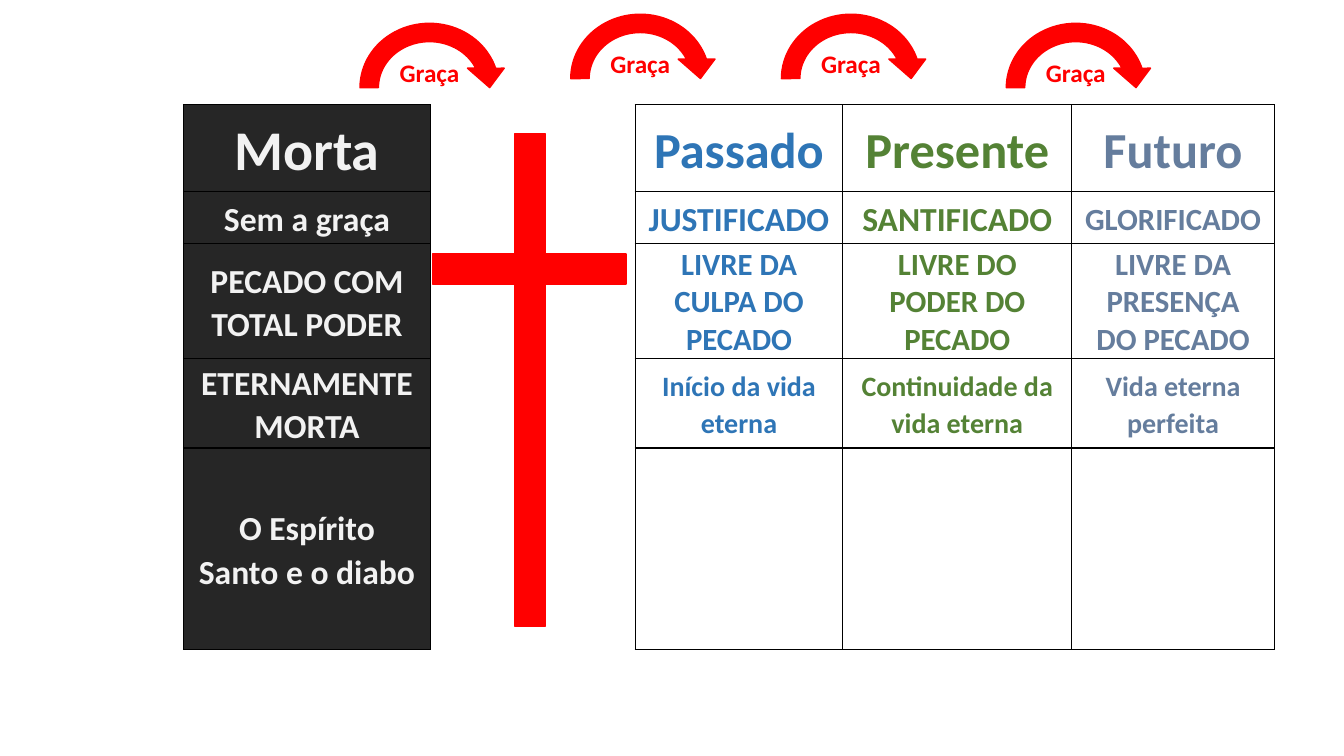
from dataclasses import dataclass

from lxml import etree
from pptx import Presentation
from pptx.dml.color import RGBColor
from pptx.enum.shapes import MSO_SHAPE
from pptx.enum.text import MSO_ANCHOR, PP_ALIGN
from pptx.oxml.ns import qn
from pptx.util import Inches, Pt

RECTANGLE = MSO_SHAPE.RECTANGLE
CIRCULAR_ARROW = MSO_SHAPE.CIRCULAR_ARROW
CENTER = PP_ALIGN.CENTER
MIDDLE = MSO_ANCHOR.MIDDLE


@dataclass(frozen=True)
class Theme:
    font: str = "Calibri"
    red: str = "FF0000"
    black: str = "000000"
    dark: str = "262626"
    light: str = "F2F2F2"
    blue: str = "2E75B6"
    green: str = "548235"
    slate: str = "657D9D"
    title: int = 40
    heading: int = 36
    large: int = 24
    medium: int = 22
    small: int = 20
    label: int = 18


THEME = Theme()

COLUMN_WIDTHS = (1.16, 2.45, 2.03, 2.06, 2.27, 2.01)
ROW_HEIGHTS = (0.86, 0.52, 1.13, 0.89, 2)
DEAD_COLUMN = 1
MARGIN_COLUMN, CROSS_COLUMN = 0, 2

# Each column: index, text colour, then (text, size) from the top row down
COLUMNS = (
    (DEAD_COLUMN, THEME.light, (
        ("Morta", THEME.title),
        ("Sem a graça", THEME.large),
        ("PECADO COM TOTAL PODER", THEME.large),
        ("ETERNAMENTE MORTA", THEME.large),
        ("O Espírito Santo e o diabo", THEME.large))),
    (3, THEME.blue, (
        ("Passado", THEME.heading),
        ("JUSTIFICADO", THEME.large),
        ("LIVRE DA CULPA DO PECADO", THEME.medium),
        ("Início da vida eterna", THEME.small))),
    (4, THEME.green, (
        ("Presente", THEME.heading),
        ("SANTIFICADO", THEME.large),
        ("LIVRE DO PODER DO PECADO", THEME.medium),
        ("Continuidade da vida eterna", THEME.small))),
    (5, THEME.slate, (
        ("Futuro", THEME.heading),
        ("GLORIFICADO", THEME.medium),
        ("LIVRE DA PRESENÇA DO PECADO", THEME.medium),
        ("Vida eterna perfeita", THEME.small))),
)

CROSS_BARS = ((5.1, 1.33, 0.31, 4.88), (4.29, 2.52, 1.92, 0.3))
GRACE_ARROWS = ((3.48, 0.14), (5.57, 0.05), (7.66, 0.05), (9.89, 0.14))


def write(paragraph, text, size, color):
    paragraph.text = text
    paragraph.alignment = CENTER
    font = paragraph.font
    font.name = THEME.font
    font.size = Pt(size)
    font.bold = True
    font.color.rgb = RGBColor.from_string(color)


def set_borders(cell, visible):
    """Draw the sides named in visible (letters of LRTB) and clear the others."""
    properties = cell._tc.get_or_add_tcPr()
    for position, side in enumerate("LRTB"):
        line = etree.Element(qn(f"a:ln{side}"), w=str(Pt(1)))
        if side in visible:
            fill = etree.SubElement(line, qn("a:solidFill"))
            etree.SubElement(fill, qn("a:srgbClr"), val=THEME.black)
        else:
            etree.SubElement(line, qn("a:noFill"))
        properties.insert(position, line)


def fill_cell(cell, text, size, color):
    cell.vertical_anchor = MIDDLE
    cell.margin_left = cell.margin_right = Inches(0.12)
    cell.margin_top, cell.margin_bottom = Inches(0.02), 0
    paragraph = cell.text_frame.paragraphs[0]
    write(paragraph, text, size, color)
    if not text.startswith("LIVRE"):
        paragraph.line_spacing = 1.07
        paragraph.space_after = Pt(8)


def add_grace_table(slide):
    table = slide.shapes.add_table(
        len(ROW_HEIGHTS), len(COLUMN_WIDTHS), Inches(0.66), Inches(1.04),
        Inches(sum(COLUMN_WIDTHS)), Inches(sum(ROW_HEIGHTS))).table
    table.first_row = table.horz_banding = False
    for column, width in zip(table.columns, COLUMN_WIDTHS):
        column.width = Inches(width)
    for row, height in zip(table.rows, ROW_HEIGHTS):
        row.height = Inches(height)

    sides = {MARGIN_COLUMN: "R", CROSS_COLUMN: "LR"}
    for row in table.rows:
        for index, cell in enumerate(row.cells):
            if index == DEAD_COLUMN:
                cell.fill.solid()
                cell.fill.fore_color.rgb = RGBColor.from_string(THEME.dark)
            else:
                cell.fill.background()
            set_borders(cell, sides.get(index, "LRTB"))

    for index, color, entries in COLUMNS:
        for row, (text, size) in enumerate(entries):
            fill_cell(table.cell(row, index), text, size, color)


def add_red_shape(slide, kind, left, top, width, height):
    shape = slide.shapes.add_shape(
        kind, Inches(left), Inches(top), Inches(width), Inches(height))
    shape.shadow.inherit = False
    red = RGBColor.from_string(THEME.red)
    shape.fill.solid()
    shape.fill.fore_color.rgb = red
    shape.line.color.rgb = red
    shape.line.width = Pt(1)
    return shape


def add_grace_arrow(slide, left, top):
    arrow = add_red_shape(slide, CIRCULAR_ARROW, left, top, 1.56, 1.46)
    frame = arrow.text_frame
    frame.vertical_anchor = MIDDLE
    frame.margin_bottom = Inches(0.35)
    write(frame.paragraphs[0], "Graça", THEME.label, THEME.red)


def main():
    presentation = Presentation()
    presentation.slide_width = Inches(13.33)
    presentation.slide_height = Inches(7.5)
    slide = presentation.slides.add_slide(presentation.slide_layouts[6])
    add_grace_table(slide)
    for bar in CROSS_BARS:
        add_red_shape(slide, RECTANGLE, *bar)
    for left, top in GRACE_ARROWS:
        add_grace_arrow(slide, left, top)
    presentation.save("out.pptx")


if __name__ == "__main__":
    main()
